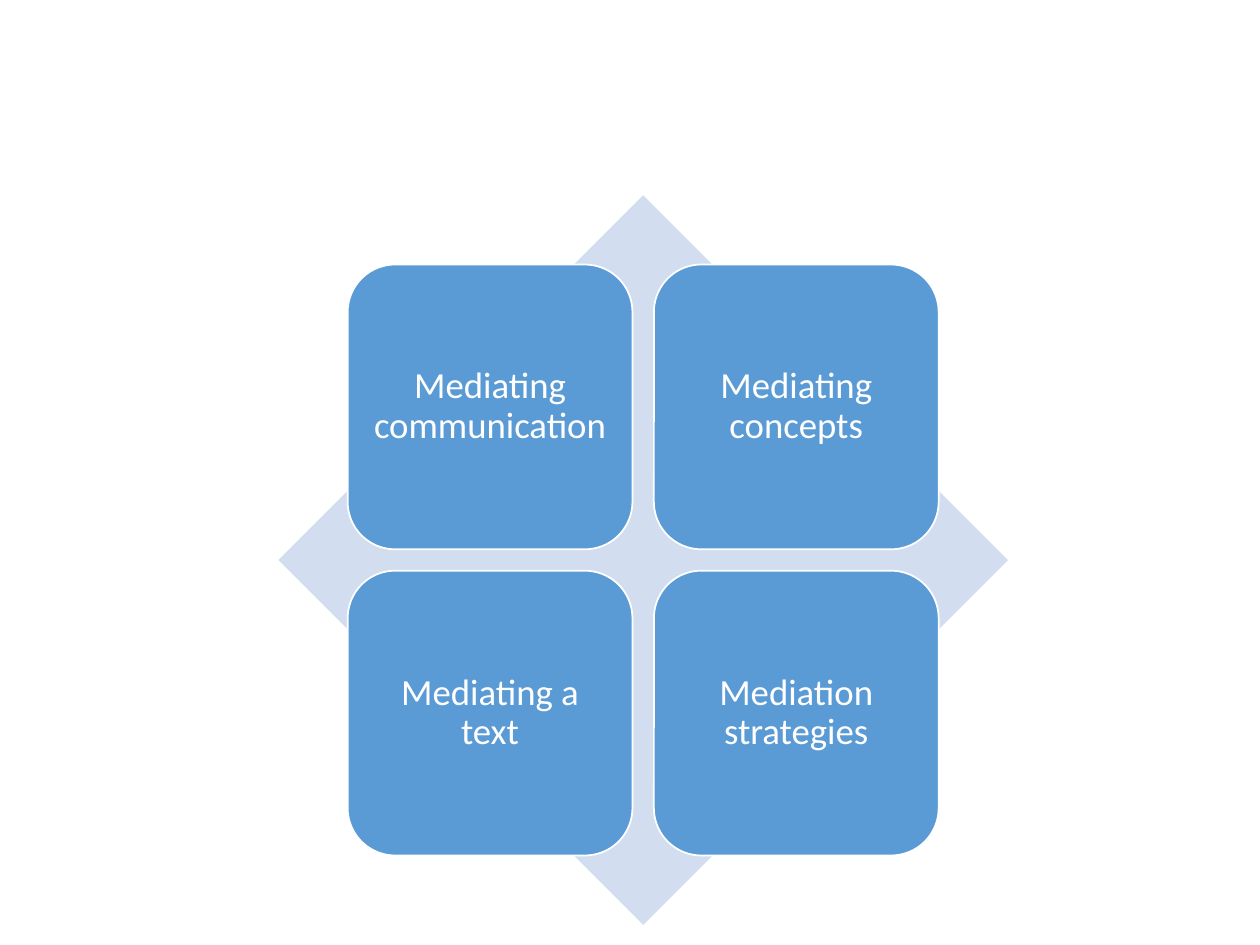
from dataclasses import dataclass

from pptx import Presentation
from pptx.dml.color import RGBColor
from pptx.enum import shapes, text
from pptx.util import Inches, Pt

BLUE = RGBColor(0x5B, 0x9B, 0xD5)
PALE = RGBColor(0xD2, 0xDE, 0xEF)
WHITE = RGBColor(0xFF, 0xFF, 0xFF)

LEFT, TOP = 2.76, 2.1
SIDE, STEP = 2.26, 2.43
INSET = 0.09


@dataclass
class Tile:
    label: str
    col: int
    row: int


TILES = [
    Tile("Mediating communication", 0, 0),
    Tile("Mediating concepts", 1, 0),
    Tile("Mediating a text", 0, 1),
    Tile("Mediation strategies", 1, 1),
]


def add_shape(slide, kind, left: float, top: float, side: float, color: RGBColor):
    shape = slide.shapes.add_shape(
        kind, Inches(left), Inches(top), Inches(side), Inches(side)
    )
    shape.shadow.inherit = False
    shape.fill.solid()
    shape.fill.fore_color.rgb = color
    return shape


def draw_diamond(slide) -> None:
    shape = add_shape(slide, shapes.MSO_SHAPE.DIAMOND, 2.21, 1.55, 5.79, PALE)
    shape.line.fill.background()


def draw_tile(slide, tile: Tile) -> None:
    shape = add_shape(
        slide,
        shapes.MSO_SHAPE.ROUNDED_RECTANGLE,
        LEFT + tile.col * STEP,
        TOP + tile.row * STEP,
        SIDE,
        BLUE,
    )
    shape.line.color.rgb = WHITE
    shape.line.width = Pt(1)

    frame = shape.text_frame
    frame.word_wrap = True
    frame.vertical_anchor = text.MSO_ANCHOR.MIDDLE
    frame.margin_left = frame.margin_right = Inches(INSET)
    frame.margin_top = frame.margin_bottom = Inches(INSET)

    para = frame.paragraphs[0]
    para.alignment = text.PP_ALIGN.CENTER
    para.line_spacing = 0.9
    run = para.add_run()
    run.text = tile.label
    run.font.name = "Calibri"
    run.font.size = Pt(21)
    run.font.color.rgb = WHITE


def main() -> None:
    deck = Presentation()
    deck.slide_width = Inches(10)
    deck.slide_height = Inches(7.5)
    slide = deck.slides.add_slide(deck.slide_layouts[6])
    draw_diamond(slide)
    for tile in TILES:
        draw_tile(slide, tile)
    deck.save("out.pptx")


if __name__ == "__main__":
    main()
